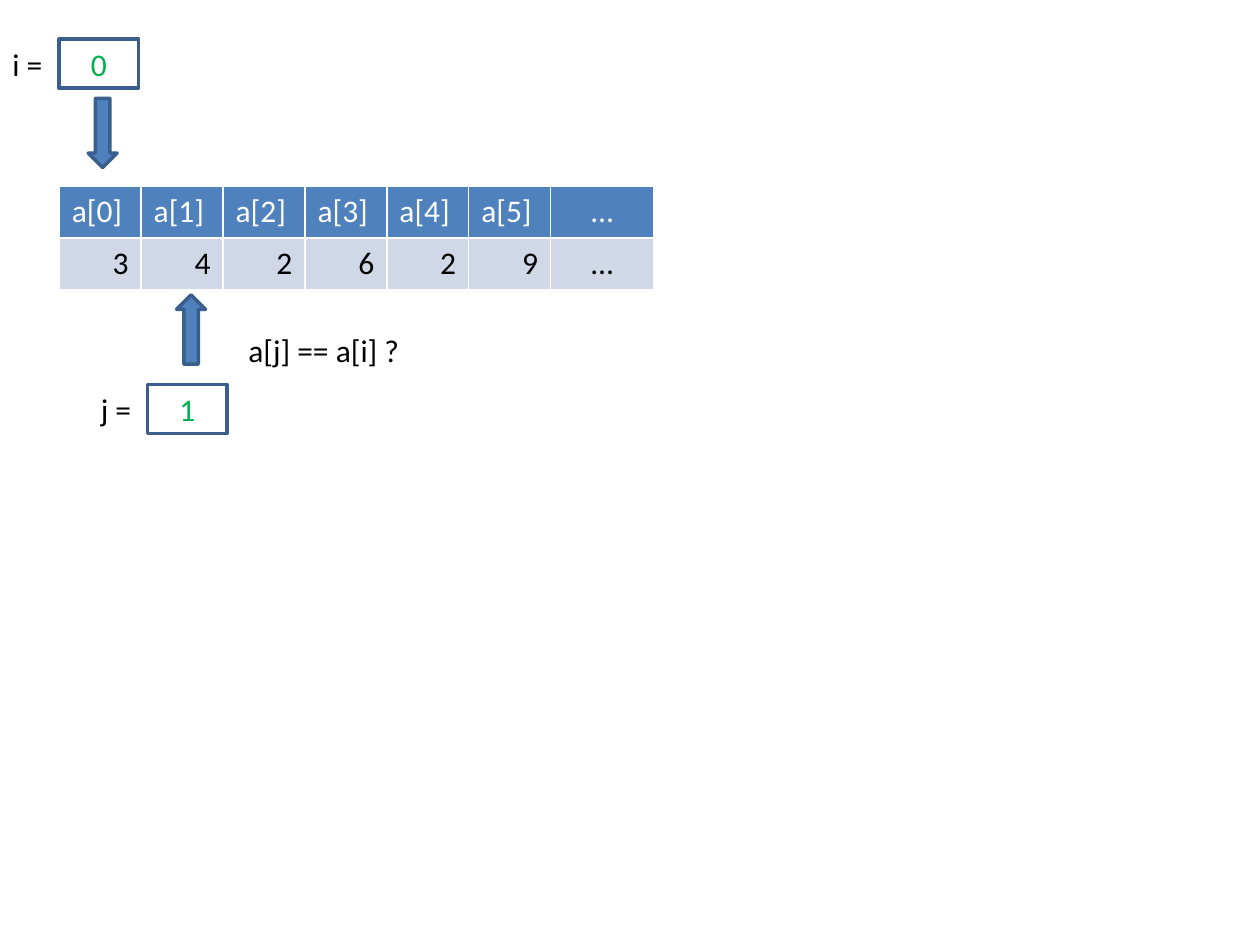
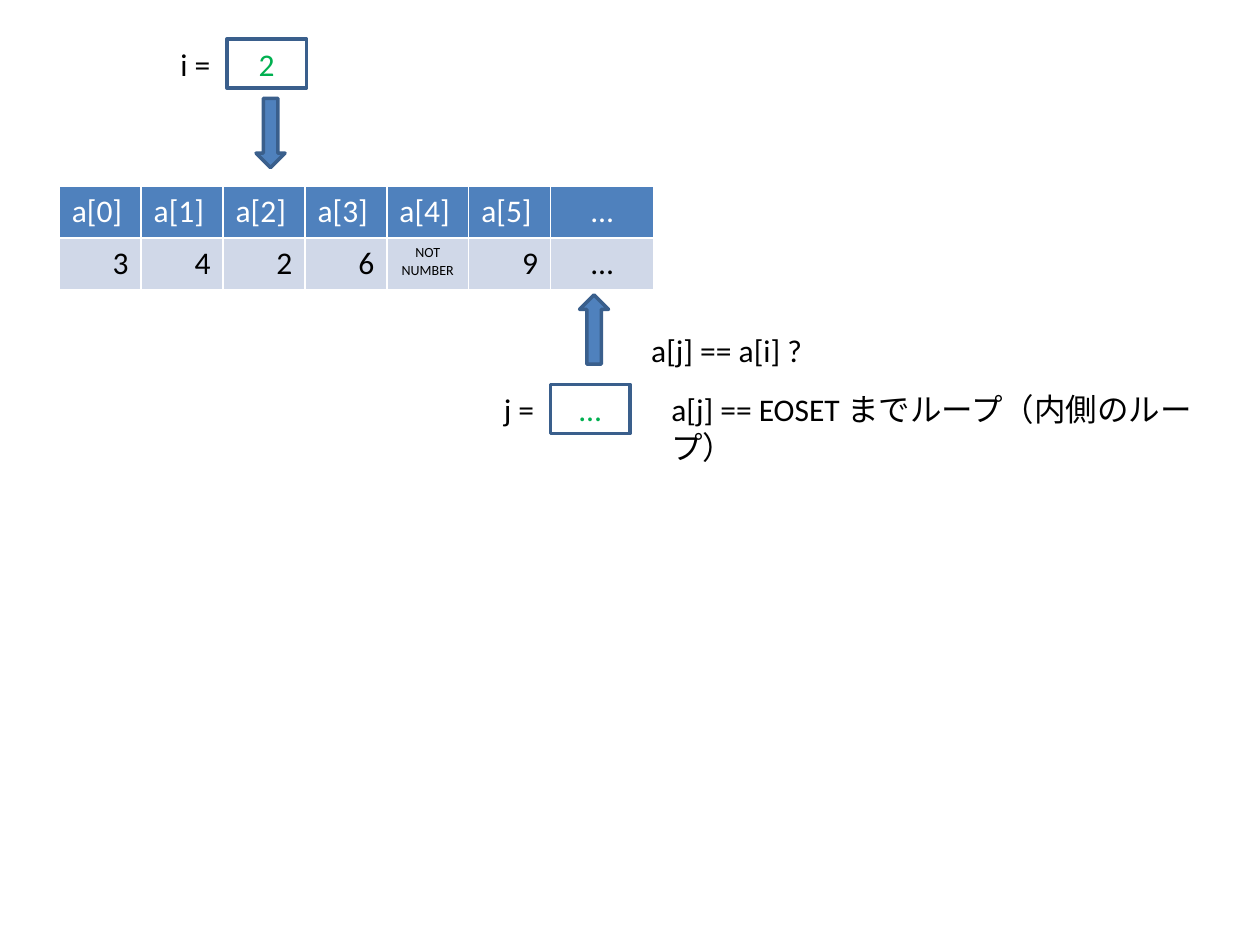
from pptx import Presentation
from pptx import util as u
from pptx.dml.color import RGBColor
from pptx.enum import shapes, text

FONT = "Calibri"
BLUE, EDGE, PALE = "4F81BD", "3A5F8C", "D0D8E8"
WHITE, BLACK, GREEN = "FFFFFF", "000000", "00B050"
LEFT, COL, LAST_COL, ROW = 0.47, 0.65, 0.82, 0.41
TABLE_TOP, I_TOP, J_TOP = 1.48, 0.31, 3.05
BOX_W, BOX_H = 0.63, 0.39
ARROW_W, ARROW_H = 0.23, 0.55
HEADINGS = [f"a[{n}]" for n in range(6)] + ["…"]
ALIGN = text.PP_ALIGN


def rgb(hex_color):
    return RGBColor.from_string(hex_color)


def write(tf, words, color, align=ALIGN.LEFT, size=18):
    tf.text = words
    p = tf.paragraphs[0]
    p.alignment = align
    font = p.runs[0].font
    font.name, font.size, font.bold = FONT, u.Pt(size), False
    font.color.rgb = rgb(color)


def add_label(slide, x, y, w, words, wrap=False):
    sp = slide.shapes.add_textbox(*map(u.Inches, (x, y, w, 0.4)))
    tf = sp.text_frame
    tf.word_wrap = wrap
    tf.auto_size = text.MSO_AUTO_SIZE.SHAPE_TO_FIT_TEXT
    write(tf, words, BLACK)


def add_block(slide, kind, x, y, w, h, fill):
    sp = slide.shapes.add_shape(kind, *map(u.Inches, (x, y, w, h)))
    sp.shadow.inherit = False
    sp.fill.solid()
    sp.fill.fore_color.rgb = rgb(fill)
    sp.line.color.rgb = rgb(EDGE)
    sp.line.width = u.Pt(2)
    return sp


def add_array(slide, values):
    width = 6 * COL + LAST_COL
    frame = slide.shapes.add_table(
        2, len(HEADINGS), *map(u.Inches, (LEFT, TABLE_TOP, width, 2 * ROW)))
    table = frame.table
    for row in table.rows:
        row.height = u.Inches(ROW)
    for c, (heading, value) in enumerate(zip(HEADINGS, values)):
        table.columns[c].width = u.Inches(LAST_COL if heading == "…" else COL)
        head, body = table.cell(0, c), table.cell(1, c)
        for cell, fill in ((head, BLUE), (body, PALE)):
            cell.fill.solid()
            cell.fill.fore_color.rgb = rgb(fill)
        write(head.text_frame, heading, WHITE,
              ALIGN.CENTER if heading == "…" else ALIGN.LEFT)
        write(body.text_frame, value, BLACK,
              ALIGN.RIGHT if value.isdigit() else ALIGN.CENTER,
              8 if value == "NOT NUMBER" else 18)


def add_index(slide, name, value, x, y, arrow, arrow_dy):
    add_block(slide, arrow, x + 0.23, y + arrow_dy, ARROW_W, ARROW_H, BLUE)
    box = add_block(slide, shapes.MSO_SHAPE.RECTANGLE, x, y, BOX_W, BOX_H, WHITE)
    box.text_frame.vertical_anchor = text.MSO_ANCHOR.MIDDLE
    write(box.text_frame, value, GREEN, ALIGN.CENTER)
    add_label(slide, x - 0.47, y, 0.45, f"{name} =")


def add_step(prs, values, i, i_col, j, j_col, loop_note=None):
    slide = prs.slides.add_slide(prs.slide_layouts[6])
    i_x, j_x = LEFT + i_col * COL, LEFT + j_col * COL
    add_array(slide, values)
    add_index(slide, "i", i, i_x, I_TOP, shapes.MSO_SHAPE.DOWN_ARROW, 0.47)
    add_index(slide, "j", j, j_x, J_TOP, shapes.MSO_SHAPE.UP_ARROW, -0.71)
    add_label(slide, j_x + 0.7, J_TOP - 0.47, 1.41, "a[j] == a[i] ?")
    if loop_note:
        add_label(slide, j_x + 0.86, J_TOP, 4.51, loop_note, wrap=True)


def main():
    prs = Presentation()
    prs.slide_width, prs.slide_height = u.Inches(10), u.Inches(7.5)
    add_step(prs, ["3", "4", "2", "6", "2", "9", "…"], "0", 0, "1", 1.08)
    add_step(prs, ["3", "4", "2", "6", "NOT NUMBER", "9", "…"], "2", 2.05, "…", 6,
             "a[j] == EOSET までループ（内側のループ）")
    prs.save("out.pptx")


if __name__ == "__main__":
    main()
